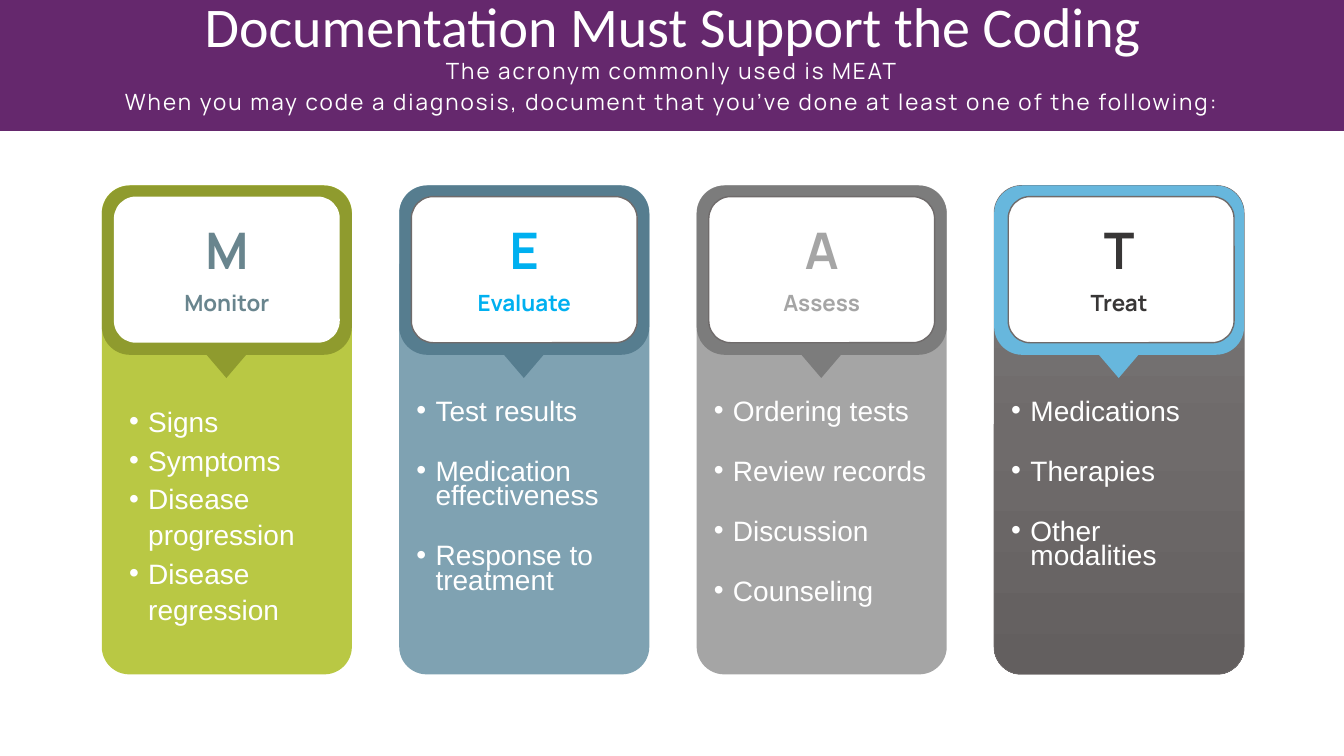
import copy
from dataclasses import dataclass

import pptx
import pptx.dml.color
import pptx.enum.shapes
import pptx.enum.text
import pptx.oxml
import pptx.oxml.ns
import pptx.util
from pptx.util import Inches, Pt

KIND = pptx.enum.shapes.MSO_SHAPE
ANCHOR = pptx.enum.text.MSO_ANCHOR
WHITE = "FFFFFF"
EDGE = "6F6B6B"
LEFT, STEP, WIDE = 1.01, 2.95, 2.48
Box = tuple[float, float, float, float]


@dataclass
class Card:
    word: str
    ink: str
    head: str
    body: list[str]
    items: list[str]
    line: float = 1.0
    inset: float = 0.12
    indent: float = 0.19
    lead: float | pptx.util.Length = Pt(17.5)
    gap: float = 25.4


CARDS = [
    Card("Monitor", "69858E", "8F9B2E", ["B9C844"],
         ["Signs", "Symptoms", "Disease progression", "Disease regression"],
         line=0, indent=0.29, lead=1.07, gap=1.9),
    Card("Evaluate", "00B0F0", "567D8F", ["7FA2B2"],
         ["Test results", "Medication effectiveness", "Response to treatment"]),
    Card("Assess", "A5A5A5", "7C7C7C", ["A5A5A5"],
         ["Ordering tests", "Review records", "Discussion", "Counseling"]),
    Card("Treat", "383636", "67B7DD", ["807D7D", EDGE, "635F5F"],
         ["Medications", "Therapies", "Other modalities"], inset=0.14),
]


def rgb(code: str) -> pptx.dml.color.RGBColor:
    return pptx.dml.color.RGBColor.from_string(code)


def paint(fill, tones: list[str]) -> None:
    """Fill with one tone, or with three shading from top to bottom."""
    if len(tones) == 1:
        fill.solid()
        fill.fore_color.rgb = rgb(tones[0])
        return
    fill.gradient()
    fill.gradient_angle = 270
    first = fill.gradient_stops[0]._gs
    first.addnext(copy.deepcopy(first))
    for i, (stop, tone) in enumerate(zip(fill.gradient_stops, tones)):
        stop.position = i / (len(tones) - 1)
        stop.color.rgb = rgb(tone)


def add_shape(slide, kind, box: Box, tones: list[str],
              line: float = 0, curve: float | None = None):
    shape = slide.shapes.add_shape(kind, *map(Inches, box))
    shape.shadow.inherit = False
    paint(shape.fill, tones)
    if line:
        shape.line.color.rgb = rgb(EDGE)
        shape.line.width = Pt(line)
    else:
        shape.line.fill.background()
    if curve is not None:
        shape.adjustments[0] = curve
    return shape


def set_font(para, size: float, face: str, ink: str, bold: bool = False) -> None:
    para.font.size = Pt(size)
    para.font.name = face
    para.font.color.rgb = rgb(ink)
    para.font.bold = bold


def add_label(slide, text: str, box: Box, size: float, ink: str,
              bold: bool = False, track: int = 0) -> None:
    frame = slide.shapes.add_textbox(*map(Inches, box)).text_frame
    frame.word_wrap = False
    frame.vertical_anchor = ANCHOR.MIDDLE if bold else ANCHOR.TOP
    para = frame.paragraphs[0]
    para.text = text
    para.alignment = pptx.enum.text.PP_ALIGN.CENTER
    set_font(para, size, "Manrope", ink, bold)
    if track:
        para.runs[0].font._element.set("spc", str(track))


def add_list(slide, card: Card, left: float) -> None:
    box = (left + 0.12, 3.96, 2.24, 2.28)
    frame = slide.shapes.add_textbox(*map(Inches, box)).text_frame
    frame.word_wrap = True
    frame.margin_left = frame.margin_right = Inches(0.05)
    frame.margin_top = frame.margin_bottom = Inches(0.03)
    for i, item in enumerate(card.items):
        para = frame.add_paragraph() if i else frame.paragraphs[0]
        para.text = item
        para.line_spacing = card.lead
        if i:
            para.space_before = Pt(card.gap)
        props = para._p.get_or_add_pPr()
        props.set("marL", str(Inches(card.indent)))
        props.set("indent", str(Inches(-0.19)))
        for tag, key, value in (("a:buFont", "typeface", "Arial"),
                                ("a:buChar", "char", "•")):
            mark = pptx.oxml.parse_xml(
                f"<{tag} {pptx.oxml.ns.nsdecls('a')}/>")
            mark.set(key, value)
            props.append(mark)
        set_font(para, 20, "Arial", WHITE)


def add_card(slide, card: Card, left: float) -> None:
    mid = left + WIDE / 2
    rim = 0.5 if len(card.body) > 1 else 0
    add_shape(slide, KIND.ROUNDED_RECTANGLE, (left, 1.84, WIDE, 4.85),
              card.body, rim, 0.11)
    add_shape(slide, KIND.ROUNDED_RECTANGLE, (left, 1.84, WIDE, 1.68),
              [card.head])
    add_shape(slide, KIND.ROUNDED_RECTANGLE,
              (left + card.inset, 1.95, 2.24, 1.45), [WHITE], card.line, 0.15)
    arrow = add_shape(slide, KIND.ISOSCELES_TRIANGLE,
                      (mid - 0.21, 3.51, 0.41, 0.24), [card.head])
    arrow.rotation = 180
    add_list(slide, card, left)
    add_label(slide, card.word[0], (mid - 0.52, 2.12, 1.04, 0.71),
              36, card.ink, True)
    add_label(slide, card.word, (mid - 0.6, 2.82, 1.2, 0.37),
              16, card.ink, True)


def add_head(slide) -> None:
    band = add_shape(slide, KIND.RECTANGLE, (-0.01, -0.07, 13.35, 1.37),
                     ["65286D"])
    title = slide.shapes.title
    title._element.addprevious(band._element)
    title.left, title.top = Inches(1.88), Inches(-0.13)
    title.width, title.height = Inches(9.58), Inches(0.77)
    frame = title.text_frame
    frame.text = "Documentation Must Support the Coding"
    frame.word_wrap = False
    frame.auto_size = pptx.enum.text.MSO_AUTO_SIZE.NONE
    frame.vertical_anchor = ANCHOR.TOP
    para = frame.paragraphs[0]
    para.alignment = pptx.enum.text.PP_ALIGN.CENTER
    para.line_spacing = 1.0
    set_font(para, 40, "Calibri", WHITE)
    add_label(slide, "The acronym commonly used is MEAT",
              (4.12, 0.52, 5.08, 0.37), 16, WHITE, track=150)
    add_label(slide, "When you may code a diagnosis, document that you’ve "
              "done at least one of the following:",
              (0.64, 0.83, 12.05, 0.37), 16, WHITE, track=150)


def main() -> None:
    deck = pptx.Presentation()
    deck.slide_width, deck.slide_height = Inches(13.33), Inches(7.5)
    slide = deck.slides.add_slide(deck.slide_layouts[5])
    add_head(slide)
    for i, card in enumerate(CARDS):
        add_card(slide, card, LEFT + i * STEP)
    deck.save("out.pptx")


if __name__ == "__main__":
    main()
